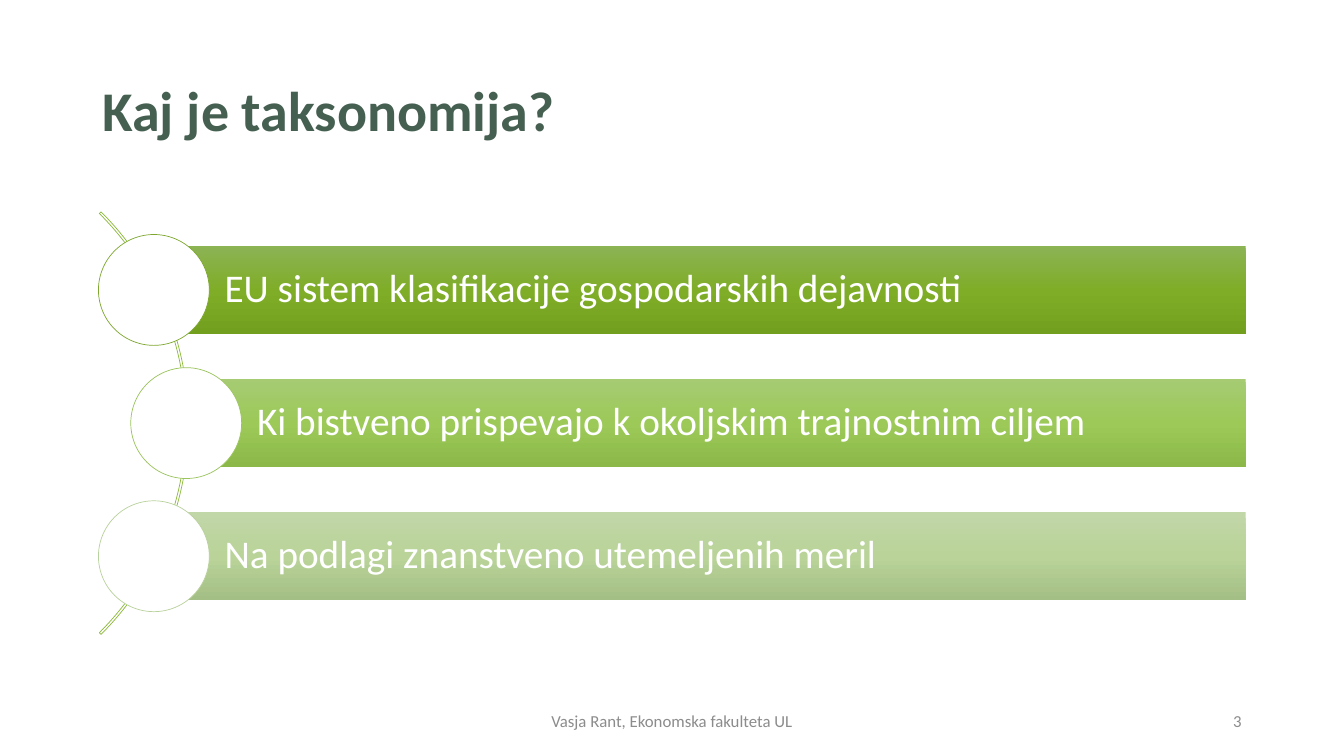
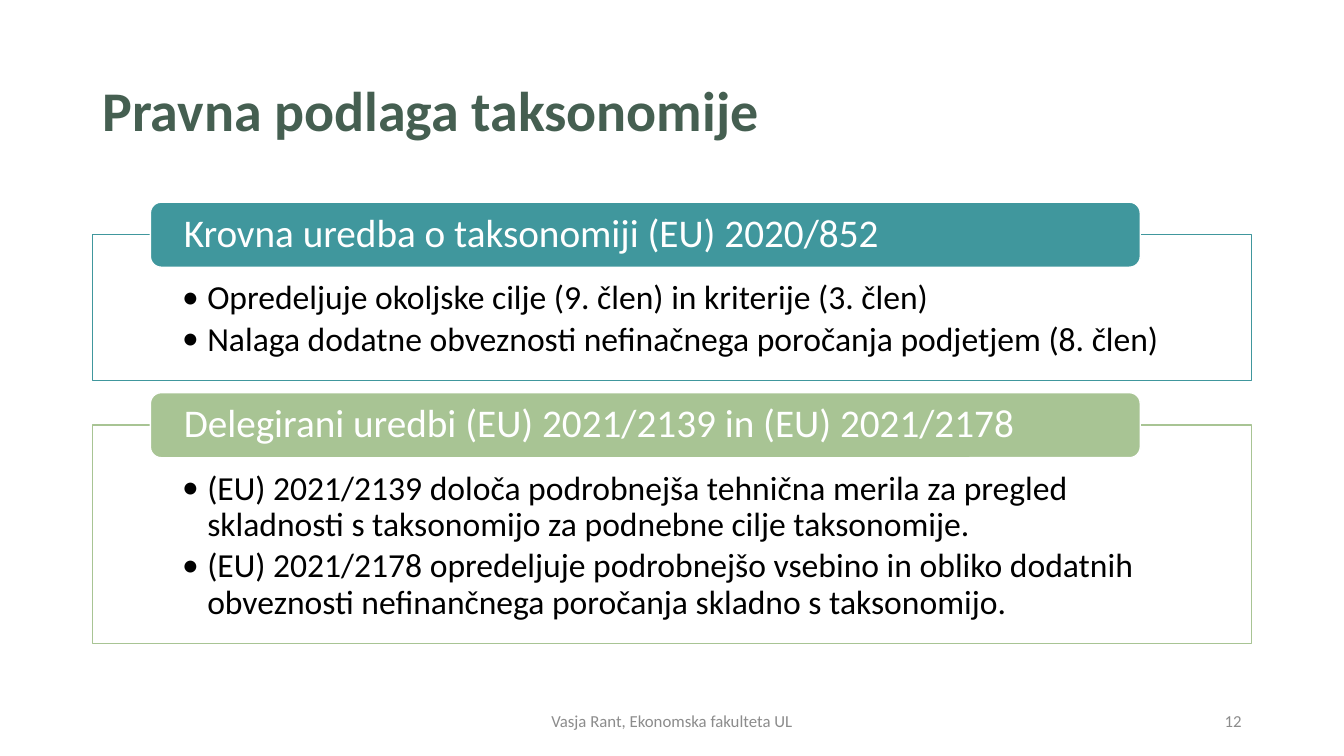
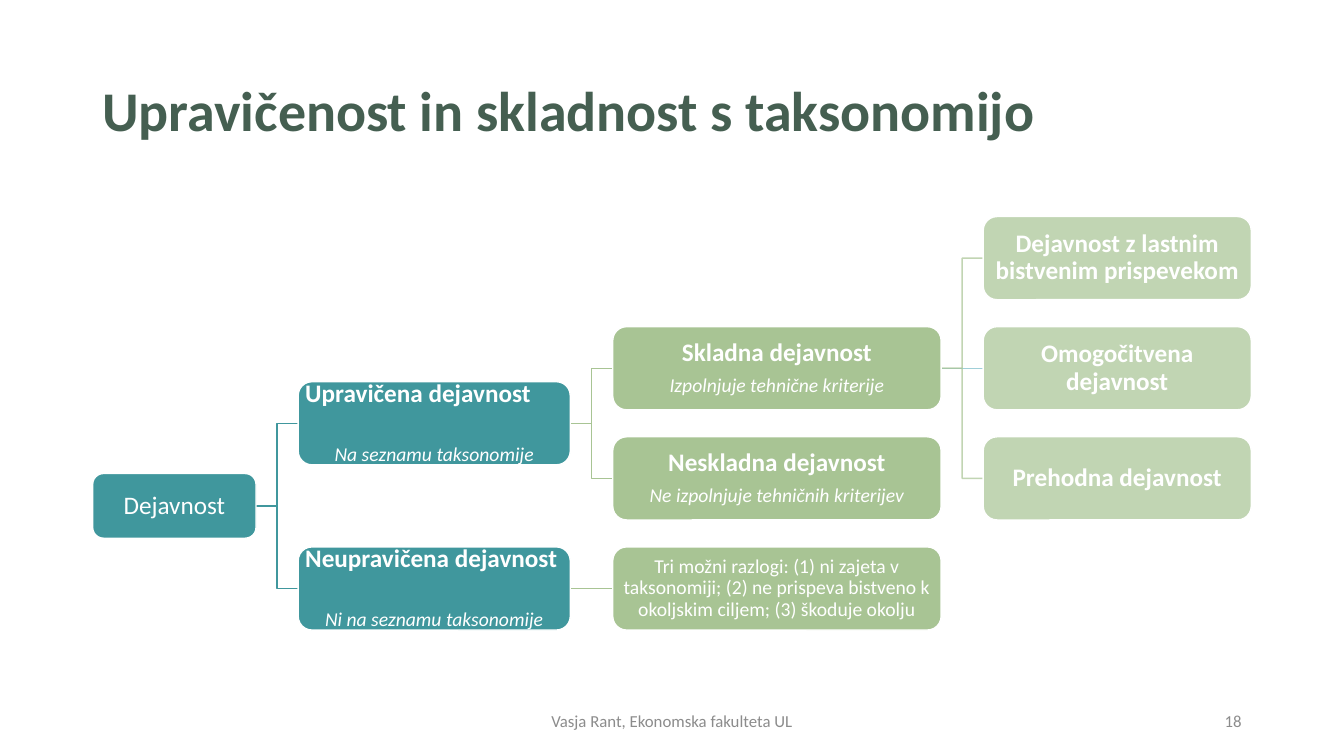
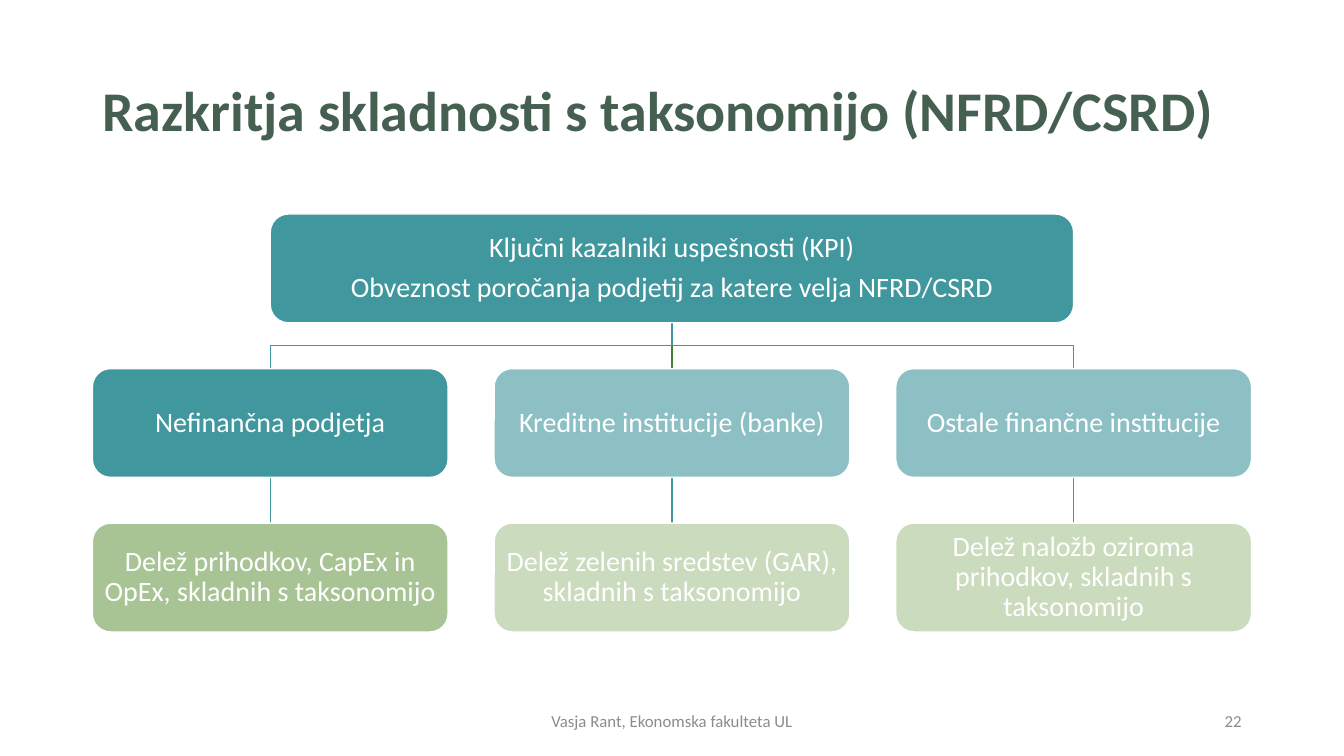
from copy import deepcopy

from lxml.etree import SubElement
from pptx import Presentation
from pptx.dml.color import RGBColor
from pptx.enum.shapes import MSO_CONNECTOR, MSO_SHAPE
from pptx.enum.text import MSO_ANCHOR, MSO_AUTO_SIZE, PP_ALIGN
from pptx.oxml.ns import qn
from pptx.util import Inches, Pt

COLUMNS, ROWS = 160, 90
CELL = Inches(1 / 12)
LEFT, WIDTH = 11, 138
FONT = "Calibri"

WHITE = RGBColor(0xFF, 0xFF, 0xFF)
BLACK = RGBColor(0x00, 0x00, 0x00)
GREY = RGBColor(0x8C, 0x8C, 0x8C)
DARK_GREEN = RGBColor(0x45, 0x5F, 0x51)
TEAL = RGBColor(0x40, 0x97, 0x9D)
SAGE = RGBColor(0xA8, 0xC4, 0x94)
PALE_BLUE = RGBColor(0xA0, 0xCF, 0xD8)
FOREST = RGBColor(0x43, 0x7F, 0x2E)
ARC_GREEN = RGBColor(0x8C, 0xB9, 0x3B)


def block(page, preset, area, fill, edge, lines=(), opacity=100, weight=1,
          align=PP_ALIGN.CENTER, margins=(0.01, 0.01, 0.01, 0.01)):
    shape = page.shapes.add_shape(preset, *[round(cells * CELL) for cells in area])
    shape.shadow.inherit = False
    if fill is None:
        shape.fill.background()
    else:
        shape.fill.solid()
        shape.fill.fore_color.rgb = fill
    if opacity < 100:
        for colour in shape._element.spPr.iter(qn("a:srgbClr")):
            SubElement(colour, qn("a:alpha"), val=str(opacity * 1000))
    if edge is None:
        shape.line.fill.background()
    else:
        shape.line.color.rgb = edge
        shape.line.width = Pt(weight)
    frame = shape.text_frame
    frame.word_wrap = True
    frame.margin_left, frame.margin_top, frame.margin_right, frame.margin_bottom = map(Inches, margins)
    for index, (text, size, bold, italic) in enumerate(lines):
        para = frame.add_paragraph() if index else frame.paragraphs[0]
        para.text = text
        para.alignment = align
        para.line_spacing = 0.9
        para.space_after = Pt(round(size * 0.35, 1))
        para.font.name, para.font.size = FONT, Pt(size)
        para.font.bold, para.font.italic = bold, italic
        para.font.color.rgb = WHITE
    return shape


def link(page, start, end, colour, opacity=100, downward=False):
    straight = start[0] == end[0] or start[1] == end[1]
    kind = MSO_CONNECTOR.STRAIGHT if straight else MSO_CONNECTOR.ELBOW
    turned = downward and not straight
    if turned:
        middle_x, middle_y = (start[0] + end[0]) / 2, (start[1] + end[1]) / 2
        half_x, half_y = (end[0] - start[0]) / 2, (end[1] - start[1]) / 2
        start = (middle_x - half_y, middle_y + half_x)
        end = (middle_x + half_y, middle_y - half_x)
    line = page.shapes.add_connector(kind, *[round(cells * CELL) for cells in (*start, *end)])
    line.line.color.rgb = colour
    line.line.width = Pt(1)
    properties = line._element.spPr
    if turned:
        properties.find(qn("a:xfrm")).set("rot", str(90 * 60000))
    if opacity < 100:
        SubElement(next(properties.iter(qn("a:srgbClr"))), qn("a:alpha"), val=str(opacity * 1000))
    SubElement(properties, qn("a:effectLst"))


deck = Presentation()
deck.slide_width = COLUMNS * CELL
deck.slide_height = ROWS * CELL
title_only = deck.slide_layouts[5]

headings = [
    ("Kaj je taksonomija?", "3"),
    ("Pravna podlaga taksonomije", "12"),
    ("Upravičenost in skladnost s taksonomijo", "18"),
    ("Razkritja skladnosti s taksonomijo (NFRD/CSRD)", "22"),
]
pages = []
for heading, number in headings:
    page = deck.slides.add_slide(title_only)
    pages.append(page)
    title = page.shapes.title
    title.left, title.top = LEFT * CELL, round(4.8 * CELL)
    title.width, title.height = WIDTH * CELL, round(17.4 * CELL)
    number_box = page.shapes.add_textbox(113 * CELL, round(83.4 * CELL), 36 * CELL, round(4.8 * CELL))
    footer_box = page.shapes.add_textbox(53 * CELL, round(83.4 * CELL), 54 * CELL, round(4.8 * CELL))
    for box, text, size, colour, align in [
        (title, heading, 40, DARK_GREEN, PP_ALIGN.LEFT),
        (number_box, number, 12, GREY, PP_ALIGN.RIGHT),
        (footer_box, "Vasja Rant, Ekonomska fakulteta UL", 12, GREY, PP_ALIGN.CENTER),
    ]:
        frame = box.text_frame
        frame.word_wrap = True
        frame.auto_size = MSO_AUTO_SIZE.NONE
        frame.vertical_anchor = MSO_ANCHOR.MIDDLE
        para = frame.paragraphs[0]
        para.text = text
        para.alignment = align
        para.line_spacing = 0.9 if box is title else 1.0
        para.font.name, para.font.size = FONT, Pt(size)
        para.font.bold = box is title
        para.font.color.rgb = colour

definition, legal_basis, eligibility, disclosure = pages

arc = block(definition, MSO_SHAPE.BLOCK_ARC, (-48.7, 14.8, 71.15, 71.15), None, ARC_GREEN, weight=0.5)
for index, value in enumerate((189, 27, 0.004)):
    arc.adjustments[index] = value

features = [
    ("EU sistem klasifikacije gospodarskih dejavnosti", 0, ("8CB354", "7FAD28", "739F1E"), "7DA72E"),
    ("Ki bistveno prispevajo k okoljskim trajnostnim ciljem", 3.85, ("A6CB73", "9CC958", "8BB848"), "9BC45D"),
    ("Na podlagi znanstveno utemeljenih meril", 0, ("C1D7A8", "B9D399", "A4BF85"), "B9D19C"),
]
for row, (text, shift, shades, ring) in enumerate(features):
    middle = 34.52 + 15.85 * row
    bar_left = 18.35 + shift
    bar = block(definition, MSO_SHAPE.RECTANGLE, (bar_left, middle - 5.25, 148.3 - bar_left, 10.5),
                WHITE, None, [(text, 28, False, False)], align=PP_ALIGN.LEFT,
                margins=(0.7, 0.08, 0.08, 0.08))
    bar.fill.gradient()
    bar.fill.gradient_angle = 270
    first_stop = next(bar._element.iter(qn("a:gs")))
    first_stop.addnext(deepcopy(first_stop))
    for stop, position, shade in zip(bar.fill.gradient_stops, (0, 0.5, 1), shades):
        stop.position = position
        stop.color.rgb = RGBColor.from_string(shade)
    block(definition, MSO_SHAPE.OVAL, (11.72 + shift, middle - 6.6, 13.2, 13.2),
          WHITE, RGBColor.from_string(ring), weight=0.5)

regulations = [
    (27.92, 17.4, TEAL, "Krovna uredba o taksonomiji (EU) 2020/852", [
        "Opredeljuje okoljske cilje (9. člen) in kriterije (3. člen)",
        "Nalaga dodatne obveznosti nefinačnega poročanja podjetjem (8. člen)",
    ]),
    (50.6, 26.05, SAGE, "Delegirani uredbi (EU) 2021/2139 in (EU) 2021/2178", [
        "(EU) 2021/2139 določa podrobnejša tehnična merila za pregled skladnosti s taksonomijo "
        "za podnebne cilje taksonomije.",
        "(EU) 2021/2178 opredeljuje podrobnejšo vsebino in obliko dodatnih obveznosti "
        "nefinančnega poročanja skladno s taksonomijo.",
    ]),
]
for top, height, colour, name, points in regulations:
    panel = block(legal_basis, MSO_SHAPE.RECTANGLE, (LEFT, top, WIDTH, height), WHITE, colour,
                  opacity=90, margins=(0.89, 0.46, 0.89, 0.19))
    frame = panel.text_frame
    frame.vertical_anchor = MSO_ANCHOR.TOP
    for index, point in enumerate(points):
        para = frame.add_paragraph() if index else frame.paragraphs[0]
        para.text = point
        properties = para._p.get_or_add_pPr()
        properties.set("marL", str(Inches(0.25)))
        properties.set("indent", str(-Inches(0.25)))
        SubElement(properties, qn("a:buFont"), typeface=FONT)
        SubElement(properties, qn("a:buChar"), char="•")
        para.alignment = PP_ALIGN.LEFT
        para.line_spacing = 0.9
        para.space_after = Pt(3.6)
        para.font.name, para.font.size = FONT, Pt(24)
        para.font.color.rgb = BLACK
    block(legal_basis, MSO_SHAPE.ROUNDED_RECTANGLE, (17.9, top - 3.85, 117.85, 7.75), colour, WHITE,
          [(name, 28, False, False)], align=PP_ALIGN.LEFT, margins=(0.3, 0, 0.3, 0))

levels = [
    (11.03, 19.45, 7.7, TEAL, 100),
    (35.5, 32.4, 9.9, TEAL, 100),
    (72.95, 39.1, 9.9, SAGE, 100),
    (117.05, 31.92, 9.9, SAGE, 70),
]
activities = [
    (0, 2.25, [("Dejavnost", 18, False, False)]),
    (1, 1.5, [("Upravičena dejavnost", 18, True, False), ("Na seznamu taksonomije", 14, False, True)]),
    (1, 3, [("Neupravičena dejavnost", 18, True, False), ("Ni na seznamu taksonomije", 14, False, True)]),
    (2, 1, [("Skladna dejavnost", 18, True, False), ("Izpolnjuje tehnične kriterije", 14, False, True)]),
    (2, 2, [("Neskladna dejavnost", 18, True, False), ("Ne izpolnjuje tehničnih kriterijev", 14, False, True)]),
    (2, 3, [("Tri možni razlogi: (1) ni zajeta v taksonomiji; (2) ne prispeva bistveno k okoljskim ciljem; "
             "(3) škoduje okolju", 14, False, False)]),
    (3, 0, [("Dejavnost z lastnim bistvenim prispevekom", 18, True, False)]),
    (3, 1, [("Omogočitvena dejavnost", 18, True, False)]),
    (3, 2, [("Prehodna dejavnost", 18, True, False)]),
]
branches = [(0, 2.25, 3), (0, 2.25, 1.5), (1, 3, 3), (1, 1.5, 2), (1, 1.5, 1),
            (2, 1, 2), (2, 1, 1), (2, 1, 0)]
first_middle, row_step = 30.73, 13.11
for level, parent_row, child_row in branches:
    left, width = levels[level][:2]
    child_left, _, _, colour, opacity = levels[level + 1]
    if level == 2 and parent_row == child_row:
        colour, opacity = PALE_BLUE, 100
    link(eligibility, (left + width, first_middle + row_step * parent_row),
         (child_left, first_middle + row_step * child_row), colour, opacity)
for level, row, lines in activities:
    left, width, height, colour, opacity = levels[level]
    top = first_middle + row_step * row - height / 2
    node = block(eligibility, MSO_SHAPE.ROUNDED_RECTANGLE, (left, top, width, height),
                 colour, WHITE, lines, opacity)
    if level == 1:
        name = node.text_frame.paragraphs[0]
        name.alignment = PP_ALIGN.LEFT
        name.space_after = Pt(26)
        name._p.get_or_add_pPr().set("marL", str(Inches(0.02)))

card_width, card_height = 42.35, 12.95
card_step, tier_step = 47.82, 18.4
tiers = [25.48 + tier_step * tier for tier in range(3)]
centres = [COLUMNS / 2 + card_step * place for place in (-1, 0, 1)]
institutions = [
    ("Nefinančna podjetja", "Delež prihodkov, CapEx in OpEx, skladnih s taksonomijo", 100, TEAL),
    ("Kreditne institucije (banke)", "Delež zelenih sredstev (GAR), skladnih s taksonomijo", 60, FOREST),
    ("Ostale finančne institucije", "Delež naložb oziroma prihodkov, skladnih s taksonomijo", 60, TEAL),
]
for centre, (_, _, _, branch_colour) in reversed(list(zip(centres, institutions))):
    link(disclosure, (centre, tiers[1] + card_height), (centre, tiers[2]), TEAL)
    link(disclosure, (centres[1], tiers[0] + card_height), (centre, tiers[1]), branch_colour, downward=True)
block(disclosure, MSO_SHAPE.ROUNDED_RECTANGLE,
      (centres[0], tiers[0], 2 * card_step, card_height), TEAL, WHITE,
      [("Ključni kazalniki uspešnosti (KPI)", 20, False, False),
       ("Obveznost poročanja podjetij za katere velja NFRD/CSRD", 20, False, False)])
for centre, (name, indicator, opacity, _) in zip(centres, institutions):
    for top, text, colour in ((tiers[1], name, TEAL), (tiers[2], indicator, SAGE)):
        block(disclosure, MSO_SHAPE.ROUNDED_RECTANGLE,
              (centre - card_width / 2, top, card_width, card_height), colour, WHITE,
              [(text, 20, False, False)], opacity)

deck.save("out.pptx")
